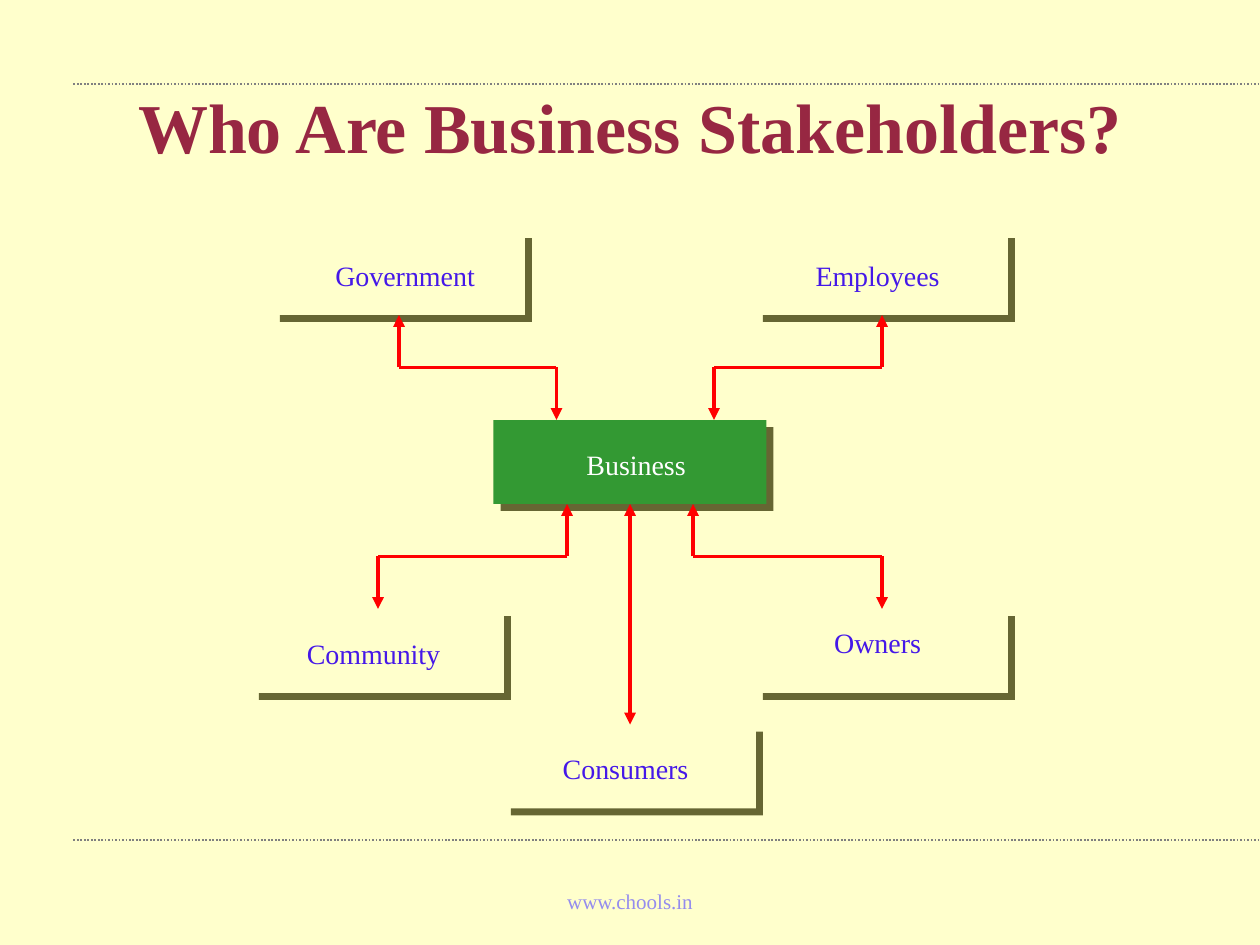
"""Build a slide that maps the stakeholders around a business."""
from dataclasses import dataclass

from lxml.etree import SubElement
from pptx import Presentation
from pptx.dml.color import RGBColor as RGB
from pptx.enum.dml import MSO_LINE
from pptx.enum.shapes import MSO_CONNECTOR as Connector, MSO_SHAPE as Shape
from pptx.enum.text import MSO_ANCHOR as Anchor, PP_ALIGN as Align
from pptx.oxml.ns import qn
from pptx.util import Pt


@dataclass(frozen=True)
class Theme:
    font: str = "Times New Roman"
    background: RGB = RGB(0xFF, 0xFF, 0xCC)
    title: RGB = RGB(0x97, 0x27, 0x42)
    label: RGB = RGB(0x45, 0x18, 0xE8)
    hub: RGB = RGB(0x33, 0x99, 0x33)
    hub_label: RGB = RGB(0xFF, 0xFF, 0xFF)
    shadow: str = "666633"
    arrow: RGB = RGB(0xFF, 0x00, 0x00)
    rule: RGB = RGB(0x80, 0x80, 0x80)
    footer: RGB = RGB(0x94, 0x8C, 0xEE)
    title_size: int = 40
    label_size: int = 16
    footer_size: int = 12


theme = Theme()
presentation = Presentation()
presentation.slide_width, presentation.slide_height = Pt(720), Pt(540)
slide = presentation.slides.add_slide(presentation.slide_layouts[6])
slide.background.fill.solid()
slide.background.fill.fore_color.rgb = theme.background


def add_text(text, left, top, width, height, size, color, anchor=Anchor.MIDDLE, bold=False):
    box = slide.shapes.add_textbox(Pt(left), Pt(top), Pt(width), Pt(height))
    frame = box.text_frame
    frame.word_wrap = True
    frame.vertical_anchor = anchor
    paragraph = frame.paragraphs[0]
    paragraph.alignment = Align.CENTER
    run = paragraph.add_run()
    run.text = text
    run.font.name, run.font.size, run.font.bold = theme.font, Pt(size), bold
    run.font.color.rgb = color


def add_line(x1, y1, x2, y2, color, width, arrow=False):
    line = slide.shapes.add_connector(Connector.STRAIGHT, Pt(x1), Pt(y1), Pt(x2), Pt(y2))
    line.line.color.rgb = color
    line.line.width = Pt(width)
    properties = line._element.spPr
    if arrow:
        SubElement(properties.find(qn("a:ln")), qn("a:tailEnd"), type="triangle")
    SubElement(properties, qn("a:effectLst"))
    return line


for rule_y in (480, 48):
    rule = add_line(42, rule_y, 720, rule_y, theme.rule, 1)
    rule.line.dash_style = MSO_LINE.ROUND_DOT

add_text("Who Are Business Stakeholders?", 54, 54, 612, 36,
         theme.title_size, theme.title, bold=True)

boxes = [
    ("Business", 282, 240, 156, 312, 252, theme.hub, theme.hub_label),
    ("Government", 156, 132, 144, 180, 144, theme.background, theme.label),
    ("Consumers", 288, 414, 144, 306, 426, theme.background, theme.label),
    ("Owners", 432, 348, 144, 450, 354, theme.background, theme.label),
    ("Community", 144, 348, 144, 162, 360, theme.background, theme.label),
    ("Employees", 432, 132, 144, 450, 144, theme.background, theme.label),
]
for name, left, top, width, text_left, text_top, fill, color in boxes:
    box = slide.shapes.add_shape(Shape.RECTANGLE, Pt(left), Pt(top), Pt(width), Pt(48))
    box.fill.solid()
    box.fill.fore_color.rgb = fill
    box.line.fill.background()
    box.shadow.inherit = False
    effects = box._element.spPr.find(qn("a:effectLst"))
    shadow = SubElement(effects, qn("a:outerShdw"), dist=str(Pt(5.7)), dir="2700000",
                        algn="ctr", rotWithShape="0")
    SubElement(shadow, qn("a:srgbClr"), val=theme.shadow)
    add_text(name, text_left, text_top, 103, 26.6, theme.label_size, color, Anchor.TOP)

routes = [
    (360, 360, 318, 288, 414),
    (324, 216, 318, 288, 348),
    (396, 504, 318, 288, 348),
    (318, 228, 210, 240, 180),
    (408, 504, 210, 240, 180),
]
for hub_x, stakeholder_x, bend_y, hub_y, stakeholder_y in routes:
    if hub_x != stakeholder_x:
        add_line(hub_x, bend_y, stakeholder_x, bend_y, theme.arrow, 2.25)
    for x, end_y in ((hub_x, hub_y), (stakeholder_x, stakeholder_y)):
        add_line(x, bend_y, x, end_y, theme.arrow, 2.25, arrow=True)

add_text("www.chools.in", 238.5, 500.5, 243, 29, theme.footer_size, theme.footer)

presentation.save("out.pptx")
